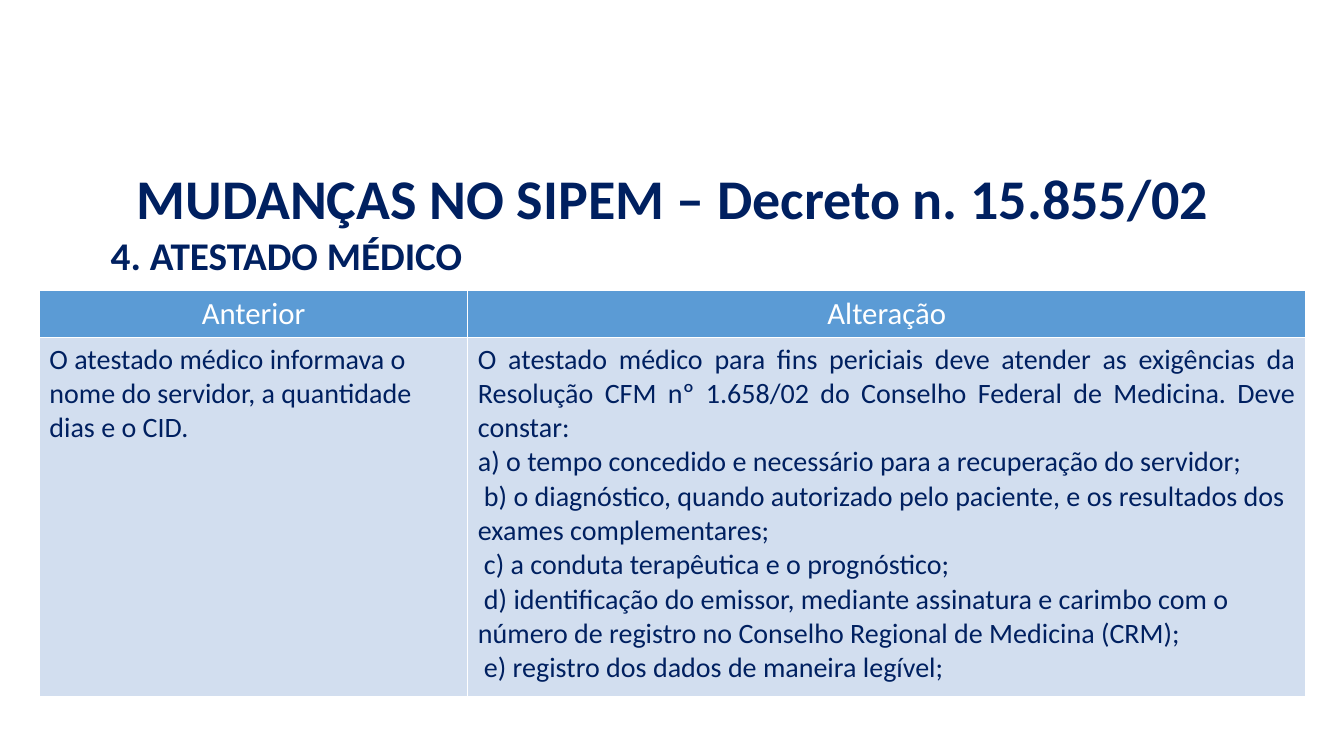
from dataclasses import dataclass

from lxml.etree import SubElement
from pptx import Presentation
from pptx.dml.color import RGBColor
from pptx.enum.text import MSO_ANCHOR, PP_ALIGN
from pptx.oxml.ns import qn
from pptx.util import Inches, Pt


@dataclass(frozen=True)
class Theme:
    font: str = "Calibri"
    navy: str = "002060"
    white: str = "FFFFFF"
    head: str = "5B9BD5"
    body: str = "D2DEEF"
    title_size: int = 40
    topic_size: int = 28
    head_size: int = 22
    body_size: int = 20


THEME = Theme()

# Table content
HEADS = ["Anterior", "Alteração"]
BEFORE = "O atestado médico informava o nome do servidor, a quantidade dias e o CID."
INTRO = ("O atestado médico para fins periciais deve atender as exigências da "
         "Resolução CFM nº 1.658/02 do Conselho Federal de Medicina. Deve constar:")
FIRST = "a) o tempo concedido e necessário para a recuperação do servidor;"
ITEMS = [
    "b) o diagnóstico, quando autorizado pelo paciente, e os resultados dos "
    "exames complementares;",
    "c) a conduta terapêutica e o prognóstico;",
    "d) identificação do emissor, mediante assinatura e carimbo com o número "
    "de registro no Conselho Regional de Medicina (CRM);",
    "e) registro dos dados de maneira legível;",
]


def add_run(para, text, size, color, bold=False):
    run = para.add_run()
    run.text = text
    font = run.font
    font.name, font.size, font.bold = THEME.font, Pt(size), bold
    font.color.rgb = RGBColor.from_string(color)


def add_text(slide, box, text, size, align, anchor):
    frame = slide.shapes.add_textbox(*map(Inches, box)).text_frame
    frame.word_wrap = True
    frame.vertical_anchor = anchor
    para = frame.paragraphs[0]
    para.alignment = align
    para.line_spacing = 0.9
    add_run(para, text, size, THEME.navy, bold=True)


def style_cell(cell, color, anchor):
    # Borders come before the fill in the cell's XML
    props = cell._tc.get_or_add_tcPr()
    for side in ("lnL", "lnR", "lnT", "lnB"):
        line = SubElement(props, qn(f"a:{side}"), w=str(Pt(1)))
        fill = SubElement(line, qn("a:solidFill"))
        SubElement(fill, qn("a:srgbClr"), val=THEME.white)
    cell.fill.solid()
    cell.fill.fore_color.rgb = RGBColor.from_string(color)
    cell.vertical_anchor = anchor


def fill_cell(cell, lines, size, color):
    """Write lines given as (text, alignment, first-line indent)."""
    frame = cell.text_frame
    for num, (text, align, indent) in enumerate(lines):
        para = frame.add_paragraph() if num else frame.paragraphs[0]
        para.alignment = align
        if indent:
            props = para._p.get_or_add_pPr()
            props.set("marL", "0")
            props.set("indent", str(Inches(indent)))
        add_run(para, text, size, color)


def add_grid(slide, box, widths, heights):
    grid = slide.shapes.add_table(2, 2, *map(Inches, box)).table
    for col, width in zip(grid.columns, widths):
        col.width = Inches(width)
    for row, height in zip(grid.rows, heights):
        row.height = Inches(height)

    left = PP_ALIGN.LEFT
    change = [(INTRO, PP_ALIGN.JUSTIFY, 0), (FIRST, left, 0)]
    change += [(item, left, 0.06) for item in ITEMS]
    texts = [[(BEFORE, left, 0)], change]
    for col, (head, lines) in enumerate(zip(HEADS, texts)):
        top, low = grid.cell(0, col), grid.cell(1, col)
        style_cell(top, THEME.head, MSO_ANCHOR.MIDDLE)
        fill_cell(top, [(head, PP_ALIGN.CENTER, 0)], THEME.head_size, THEME.white)
        style_cell(low, THEME.body, MSO_ANCHOR.TOP)
        fill_cell(low, lines, THEME.body_size, THEME.navy)


def main():
    deck = Presentation()
    deck.slide_width, deck.slide_height = Inches(13.33), Inches(7.5)
    slide = deck.slides.add_slide(deck.slide_layouts[6])

    # Title and topic
    add_text(slide, (0.85, 1.55, 11.64, 0.9),
             "MUDANÇAS NO SIPEM – Decreto n. 15.855/02",
             THEME.title_size, PP_ALIGN.CENTER, MSO_ANCHOR.MIDDLE)
    add_text(slide, (1, 2.3, 11.33, 0.55), "4. ATESTADO MÉDICO",
             THEME.topic_size, PP_ALIGN.LEFT, MSO_ANCHOR.TOP)

    # Comparison table
    add_grid(slide, (0.39, 2.88, 12.56, 4.02), (4.25, 8.31), (0.46, 3.56))

    deck.save("out.pptx")


if __name__ == "__main__":
    main()
